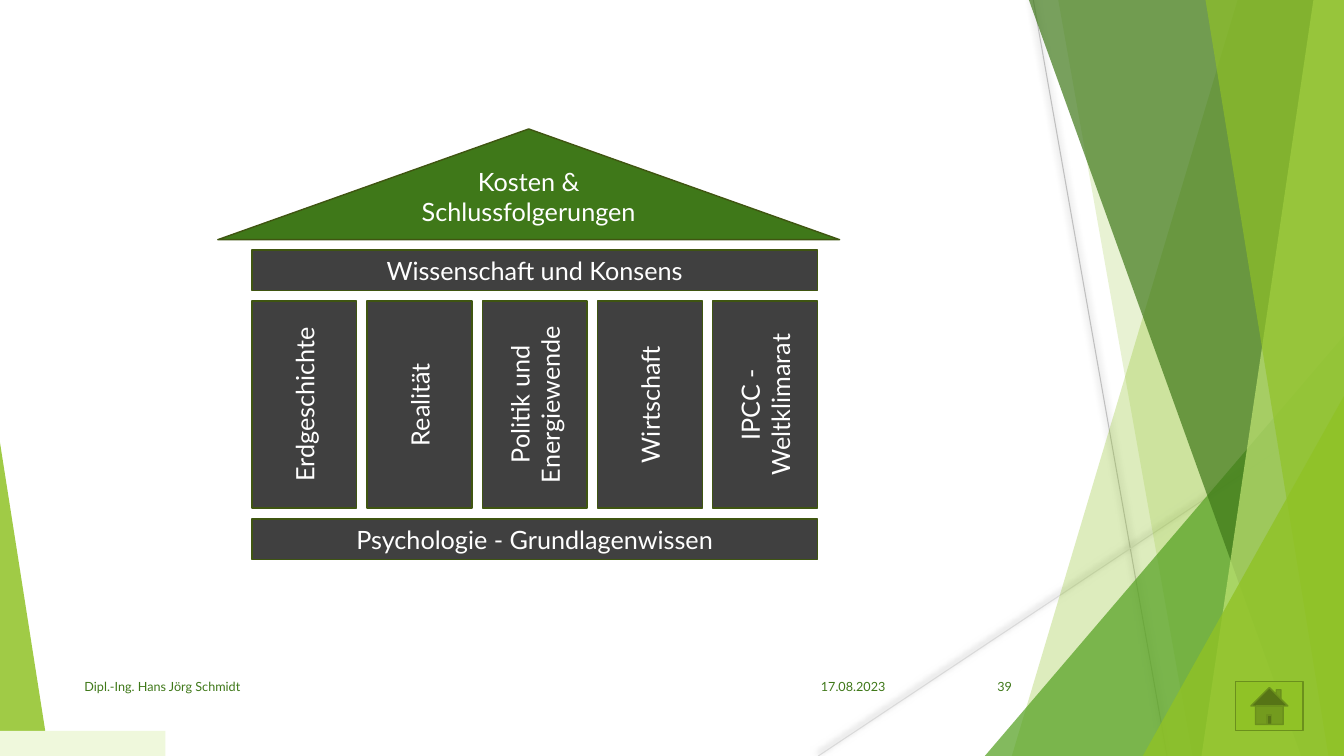
from lxml import etree
from pptx import Presentation
from pptx.dml.color import RGBColor
from pptx.enum import shapes, text
from pptx.oxml import parse_xml
from pptx.oxml.ns import nsdecls, qn
from pptx.util import Cm, Pt

WIDTH, HEIGHT = 33.87, 19.05
GREEN, LIME, DARK, EDGE = "3F7819", "90C226", "404040", "3F5511"
RECT = shapes.MSO_SHAPE.RECTANGLE
TRIANGLE = shapes.MSO_SHAPE.ISOSCELES_TRIANGLE
CENTER, RIGHT = text.PP_ALIGN.CENTER, text.PP_ALIGN.RIGHT


def paint(fmt, color, alpha=100):
    fmt.solid()
    fmt.fore_color.rgb = RGBColor.from_string(color)
    if alpha < 100:
        clr = fmt._xPr.find(qn("a:solidFill"))[0]
        etree.SubElement(clr, qn("a:alpha")).set("val", str(alpha * 1000))


def style(sp, fill, alpha=100, line=None):
    sp.shadow.inherit = False
    paint(sp.fill, fill, alpha)
    if line:
        paint(sp.line.fill, line)
        sp.line.width = Pt(1)
    else:
        sp.line.fill.background()


def write(sp, content, size=18, color="FFFFFF", align=CENTER, vert=None, bottom=None):
    tf = sp.text_frame
    tf.word_wrap = True
    tf.vertical_anchor = text.MSO_ANCHOR.MIDDLE
    if vert:
        tf._txBody.bodyPr.set("vert", vert)
    if bottom is not None:
        tf.margin_bottom = Cm(bottom)
    p = tf.paragraphs[0]
    p.alignment = align
    r = p.add_run()
    r.text = content
    r.font.size = Pt(size)
    r.font.name = "Lato"
    r.font.color.rgb = RGBColor.from_string(color)


def add_box(s, kind, left, top, width, height, fill, alpha=100, line=None, adj=None):
    sp = s.shapes.add_shape(kind, Cm(left), Cm(top), Cm(width), Cm(height))
    style(sp, fill, alpha, line)
    if adj is not None:
        sp.adjustments[0] = adj
    return sp


def add_band(s, top_x, bottom_x, fill, alpha):
    fb = s.shapes.build_freeform(Cm(top_x), 0, scale=1.0)
    fb.add_line_segments([(Cm(WIDTH), 0), (Cm(WIDTH), Cm(HEIGHT)),
                          (Cm(bottom_x), Cm(HEIGHT))], close=True)
    style(fb.convert_to_shape(), fill, alpha)


def add_ray(s, x1, y1, x2, y2, color):
    ray = s.shapes.add_connector(shapes.MSO_CONNECTOR.STRAIGHT,
                                 Cm(x1), Cm(y1), Cm(x2), Cm(y2))
    paint(ray.line.fill, color)
    ray.line.width = Pt(0.75)
    ray._element.spPr.append(parse_xml(
        f'<a:effectLst {nsdecls("a")}><a:outerShdw blurRad="{Pt(5)}" dist="{Pt(2)}" '
        'dir="14700000"><a:srgbClr val="000000"><a:alpha val="50000"/></a:srgbClr>'
        '</a:outerShdw></a:effectLst>'))


def add_footer(s, content, left, width, align):
    sp = s.shapes.add_textbox(Cm(left), Cm(16.79), Cm(width), Cm(1.02))
    write(sp, content, size=9, color=GREEN, align=align)


def add_backdrop(s):
    add_ray(s, 26.04, 0, 29.41, HEIGHT, "BFBFBF")
    add_ray(s, WIDTH, 10.24, 20.62, HEIGHT, "D9D9D9")
    add_band(s, 31.19, 25.5, LIME, 30)
    add_band(s, 26.67, 30.05, LIME, 20)
    add_box(s, TRIANGLE, 24.82, 8.46, 9.05, 10.59, "54A021", 72, adj=1)
    add_band(s, 25.93, 32.79, GREEN, 70)
    add_band(s, 33.1, 30.28, "C0E474", 70)
    add_band(s, 30.38, 33.48, LIME, 65)
    add_box(s, TRIANGLE, 28.8, 9.98, 5.07, 9.07, LIME, 80, adj=1)
    add_box(s, TRIANGLE, 0, 11.15, 1.24, 7.9, LIME, 85, adj=0)
    add_box(s, RECT, 0, 18.42, 4.17, 0.63, "EFF8DC")


def add_house(s):
    left, width, pillar = 6.35, 14.25, 2.64
    pillars = ["Erdgeschichte", "Realität", "Politik und Energiewende",
               "Wirtschaft", "IPCC - Weltklimarat"]
    pitch = (width - pillar) / (len(pillars) - 1)
    base = add_box(s, RECT, left, 13.08, width, 1.02, DARK, line=EDGE)
    write(base, "Psychologie - Grundlagenwissen")
    for i, name in enumerate(pillars):
        sp = add_box(s, RECT, left + i * pitch, 7.59, pillar, 5.21, DARK, line=EDGE)
        write(sp, name, vert="vert270")
    beam = add_box(s, RECT, left, 6.3, width, 1.02, DARK, line=EDGE)
    write(beam, "Wissenschaft und Konsens")
    roof = add_box(s, TRIANGLE, 5.49, 3.25, 15.67, 2.79, GREEN, line=EDGE)
    write(roof, "Kosten & Schlussfolgerungen", bottom=0.89)


def main():
    prs = Presentation()
    prs.slide_width, prs.slide_height = Cm(WIDTH), Cm(HEIGHT)
    s = prs.slides.add_slide(prs.slide_layouts[6])
    add_backdrop(s)
    add_footer(s, "17.08.2023", 20.02, 2.54, RIGHT)
    add_footer(s, "Dipl.-Ing. Hans Jörg Schmidt", 1.88, 17.5, text.PP_ALIGN.LEFT)
    add_footer(s, "39", 23.85, 1.9, RIGHT)
    add_house(s)
    add_box(s, shapes.MSO_SHAPE.ACTION_BUTTON_HOME, 31.14, 17.17, 1.7, 1.24,
            LIME, line="6B901C")
    prs.save("out.pptx")


if __name__ == "__main__":
    main()
